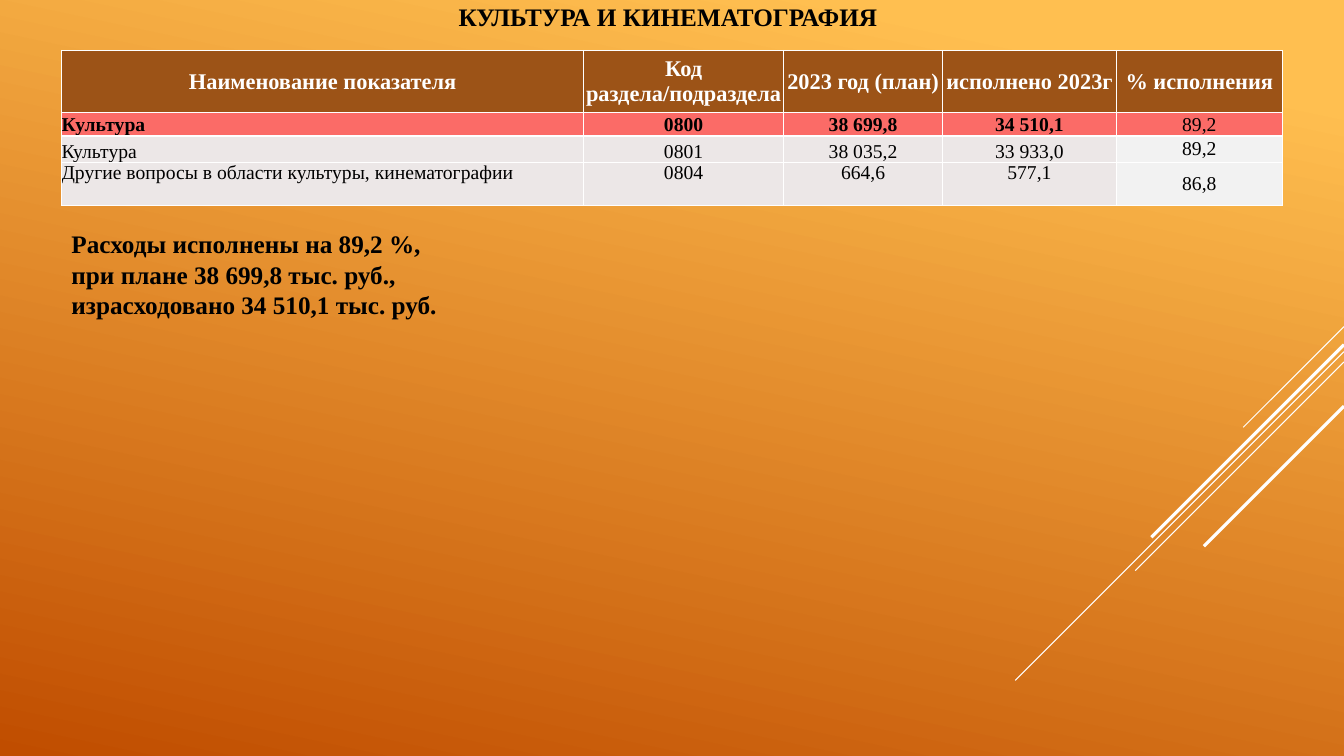
from lxml import etree
from pptx import Presentation
from pptx.dml.color import RGBColor
from pptx.enum.shapes import MSO_CONNECTOR
from pptx.enum.text import MSO_ANCHOR, PP_ALIGN
from pptx.oxml.ns import qn
from pptx.util import Inches, Pt

SLIDE_WIDTH, SLIDE_HEIGHT = Inches(13.33), Inches(7.5)
LEFT, CENTER = PP_ALIGN.LEFT, PP_ALIGN.CENTER
TOP, MIDDLE, BOTTOM = MSO_ANCHOR.TOP, MSO_ANCHOR.MIDDLE, MSO_ANCHOR.BOTTOM
STRAIGHT = MSO_CONNECTOR.STRAIGHT

FONT = "Times New Roman"
WHITE = RGBColor(0xFF, 0xFF, 0xFF)
BLACK = RGBColor(0x00, 0x00, 0x00)
AMBER = RGBColor(0xFF, 0xBF, 0x50)
RUST = RGBColor(0xC0, 0x4D, 0x00)
BROWN = RGBColor(0x9C, 0x53, 0x17)
CORAL = RGBColor(0xFB, 0x6B, 0x67)
GREY = RGBColor(0xEC, 0xE7, 0xE7)
PALE_GREY = RGBColor(0xF2, 0xF2, 0xF2)

COLUMN_SHARES = [5.18, 1.98, 1.58, 1.72, 1.65]
ROW_SHARES = [0.62, 0.23, 0.26, 0.43]
HEADER = ["Наименование показателя", "Код раздела/подраздела",
          "2023 год (план)", "исполнено 2023г", "% исполнения"]
BUDGET = [
    ["Культура", "0800", "38 699,8", "34 510,1", "89,2"],
    ["Культура", "0801", "38 035,2", "33 933,0", "89,2"],
    ["Другие вопросы в области культуры, кинематографии",
     "0804", "664,6", "577,1", "86,8"],
]
# Start height and length (percent of slide height), line width in points
RAYS = [(43.2, 13.33, 0.75), (46.53, 43.47, 0.75), (47.87, 27.6, 0.75),
        (45.6, 25.47, 2.25), (53.73, 18.53, 2.25)]


def across(percent):
    return round(SLIDE_WIDTH * percent / 100)


def down(percent):
    return round(SLIDE_HEIGHT * percent / 100)


def style(para, size, color, bold, align):
    para.alignment = align
    para.font.name = FONT
    para.font.size = Pt(size)
    para.font.color.rgb = color
    para.font.bold = bold


def paint_background(page):
    fill = page.background.fill
    fill.gradient()
    fill.gradient_angle = 360 - 102
    for stop, position, color in zip(fill.gradient_stops, (0.1, 1), (AMBER, RUST)):
        stop.position = position
        stop.color.rgb = color


def add_ray(page, top, length, width):
    """Draw a 45-degree line down and left from the right edge."""
    run = down(length)
    ray = page.shapes.add_connector(
        STRAIGHT, SLIDE_WIDTH, down(top), SLIDE_WIDTH - run, down(top) + run)
    ray.line.color.rgb = WHITE
    ray.line.width = Pt(width)
    etree.SubElement(ray._element.spPr, qn("a:effectLst"))


def add_text(page, left, top, width, height, lines, align):
    box = page.shapes.add_textbox(across(left), down(top), across(width), down(height))
    frame = box.text_frame
    frame.word_wrap = True
    frame.text = "\n".join(lines)
    for para in frame.paragraphs:
        style(para, 18, BLACK, True, align)


def add_borders(cell):
    properties = cell._tc.get_or_add_tcPr()
    for index, side in enumerate(("a:lnL", "a:lnR", "a:lnT", "a:lnB")):
        border = etree.Element(qn(side), w=str(Pt(1)))
        fill = etree.SubElement(border, qn("a:solidFill"))
        etree.SubElement(fill, qn("a:srgbClr"), val=str(WHITE))
        properties.insert(index, border)


def fill_cell(cell, text, fill, anchor, size, color, bold, align):
    cell.text = text
    cell.margin_left = cell.margin_right = cell.margin_top = cell.margin_bottom = 0
    cell.vertical_anchor = anchor
    cell.fill.solid()
    cell.fill.fore_color.rgb = fill
    style(cell.text_frame.paragraphs[0], size, color, bold, align)
    add_borders(cell)


def add_budget_table(page, left, top, width, height):
    table = page.shapes.add_table(
        len(ROW_SHARES), len(COLUMN_SHARES),
        across(left), down(top), across(width), down(height)).table
    table.first_row = table.horz_banding = False
    for column, share in zip(table.columns, COLUMN_SHARES):
        column.width = round(across(width) * share / sum(COLUMN_SHARES))
    for row, share in zip(table.rows, ROW_SHARES):
        row.height = round(down(height) * share / sum(ROW_SHARES))

    for column, text in enumerate(HEADER):
        fill_cell(table.cell(0, column), text, BROWN, MIDDLE, 16, WHITE, True, CENTER)
    last_row, last_column = len(BUDGET), len(HEADER) - 1
    for row, values in enumerate(BUDGET, 1):
        total = row == 1
        for column, text in enumerate(values):
            percent = column == last_column
            fill = CORAL if total else PALE_GREY if percent else GREY
            anchor = MIDDLE if percent else TOP if row == last_row else BOTTOM
            align = CENTER if column else LEFT
            fill_cell(table.cell(row, column), text, fill, anchor,
                      14, BLACK, total and not percent, align)


def main():
    deck = Presentation()
    deck.slide_width, deck.slide_height = SLIDE_WIDTH, SLIDE_HEIGHT
    page = deck.slides.add_slide(deck.slide_layouts[6])
    paint_background(page)
    for ray in RAYS:
        add_ray(page, *ray)
    add_budget_table(page, 4.58, 6.67, 90.85, 20.53)
    add_text(page, 14.4, -0.53, 70.6, 5.33, ["КУЛЬТУРА И КИНЕМАТОГРАФИЯ"], CENTER)
    add_text(page, 4.58, 29.6, 50, 13.47,
             ["Расходы исполнены на 89,2 %,",
              "при плане 38 699,8 тыс. руб.,",
              "израсходовано 34 510,1 тыс. руб."], LEFT)
    deck.save("out.pptx")


if __name__ == "__main__":
    main()
